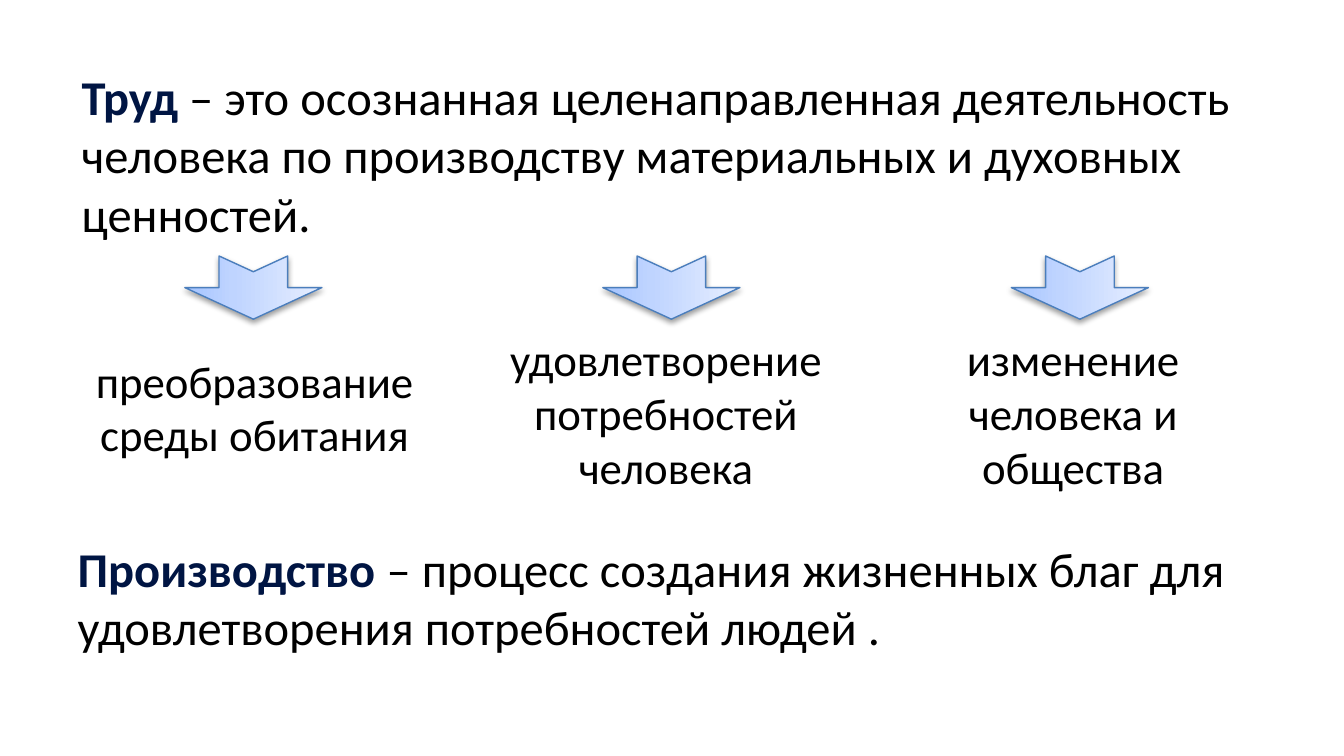
from pptx import Presentation
from pptx.dml.color import RGBColor
from pptx.enum.shapes import MSO_SHAPE
from pptx.enum.text import MSO_AUTO_SIZE, PP_ALIGN
from pptx.oxml import parse_xml
from pptx.oxml.ns import nsdecls
from pptx.util import Inches, Pt

FONT = "Calibri"
NAVY = "001543"
BLACK = "000000"
ARROW_LINE = "4B7EBC"
ARROW_STOPS = [(0, "A4C4FF"), (35, "BFD4FF"), (100, "E6EEFF")]

# term, definition, left, top, height
DEFINITIONS = [
    ("Труд ", "– это осознанная целенаправленная деятельность человека "
     "по производству материальных и духовных ценностей.", 0.51, 0.45, 1.41),
    ("Производство ", "– процесс создания жизненных благ для "
     "удовлетворения потребностей людей .", 0.48, 3.96, 0.98),
]
# text, left, top, height, left of the arrow above it
RESULTS = [
    ("преобразование среды обитания", 0.48, 2.58, 0.91, 1.65),
    ("удовлетворение потребностей человека", 3.54, 2.42, 1.31, 4.76),
    ("изменение человека и общества", 6.57, 2.42, 1.31, 7.8),
]


def color(hex_value):
    return RGBColor.from_string(hex_value)


def add_text(page, left, top, width, height, spans, size, align=PP_ALIGN.LEFT):
    """Add a text box; spans is a list of (text, colour, bold)."""
    box = page.shapes.add_textbox(Inches(left), Inches(top), Inches(width), Inches(height))
    frame = box.text_frame
    frame.word_wrap = True
    frame.auto_size = MSO_AUTO_SIZE.SHAPE_TO_FIT_TEXT
    paragraph = frame.paragraphs[0]
    paragraph.alignment = align
    for text, hex_value, bold in spans:
        span = paragraph.add_run()
        span.text = text
        span.font.name = FONT
        span.font.size = Pt(size)
        span.font.bold = bold
        span.font.color.rgb = color(hex_value)


def add_definition(page, term, meaning, left, top, height):
    spans = [(term, NAVY, True), (meaning, BLACK, False)]
    add_text(page, left, top, 8.9, height, spans, 26)


def add_down_arrow(page, left):
    arrow = page.shapes.add_shape(
        MSO_SHAPE.NOTCHED_RIGHT_ARROW, Inches(left), Inches(1.63), Inches(0.47), Inches(1.02))
    arrow.rotation = 90
    stops = "".join(
        f'<a:gs pos="{position * 1000}"><a:srgbClr val="{color(hex_value)}"/></a:gs>'
        for position, hex_value in ARROW_STOPS)
    properties = arrow._element.spPr
    properties.append(parse_xml(
        f'<a:gradFill {nsdecls("a")} rotWithShape="1"><a:gsLst>{stops}</a:gsLst>'
        '<a:lin ang="16200000" scaled="1"/></a:gradFill>'))
    arrow.line.color.rgb = color(ARROW_LINE)
    arrow.line.width = Pt(0.75)
    properties.append(parse_xml(
        f'<a:effectLst {nsdecls("a")}>'
        f'<a:outerShdw blurRad="{Pt(3.1)}" dist="{Pt(1.6)}" dir="5400000" rotWithShape="0">'
        f'<a:srgbClr val="{color(BLACK)}"><a:alpha val="38000"/></a:srgbClr>'
        '</a:outerShdw></a:effectLst>'))


def main():
    deck = Presentation()
    deck.slide_width = Inches(10)
    deck.slide_height = deck.slide_width * 9 // 16
    page = deck.slides.add_slide(deck.slide_layouts[6])
    first, last = DEFINITIONS
    add_definition(page, *first)
    for *_, arrow_left in RESULTS:
        add_down_arrow(page, arrow_left)
    for text, left, top, height, _ in RESULTS:
        add_text(page, left, top, 2.83, height, [(text, BLACK, False)], 24, PP_ALIGN.CENTER)
    add_definition(page, *last)
    deck.save("out.pptx")


if __name__ == "__main__":
    main()
